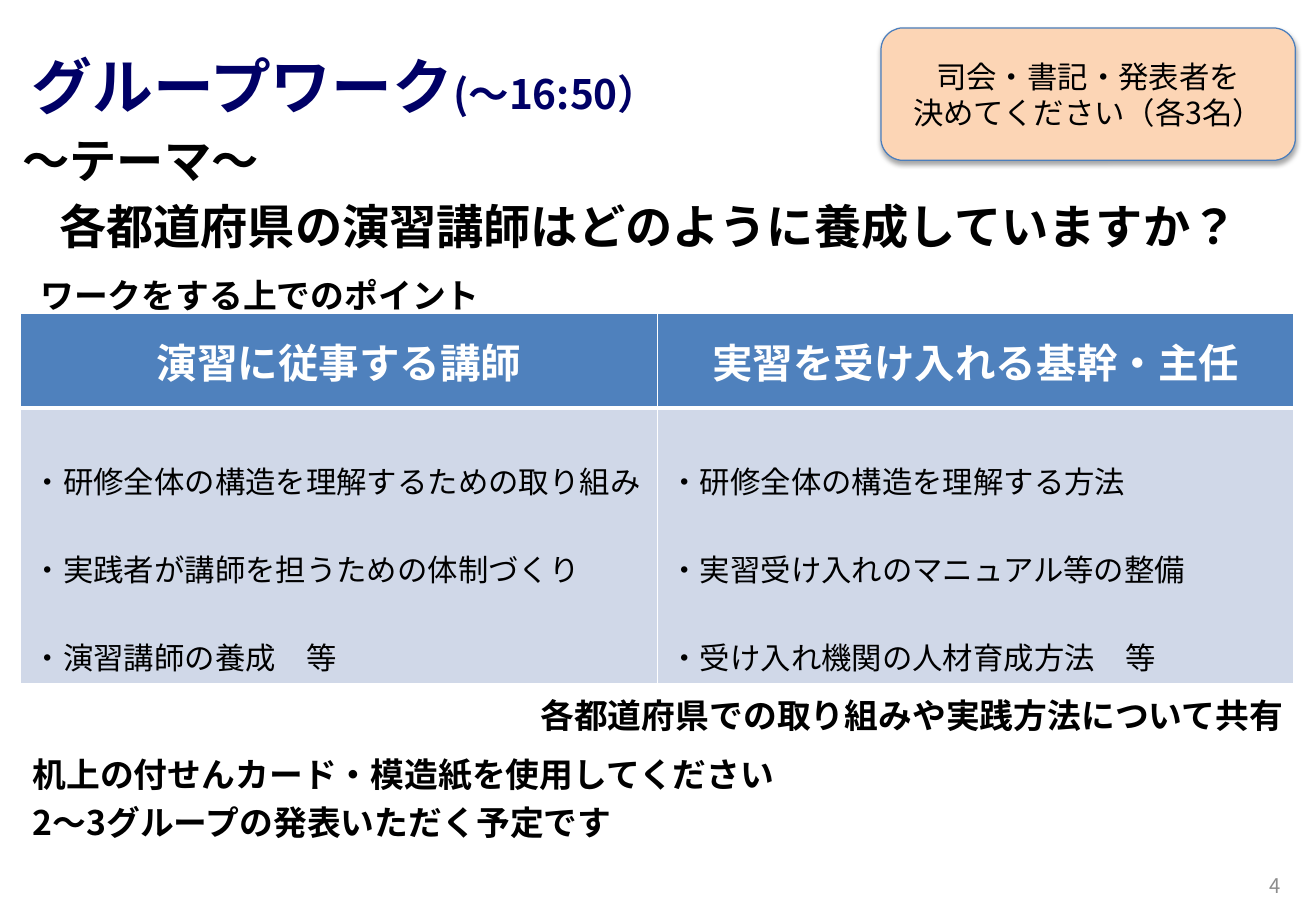
from pptx import Presentation
from pptx.dml.color import RGBColor
from pptx.enum.lang import MSO_LANGUAGE_ID as LANG
from pptx.enum.shapes import MSO_SHAPE as SHAPE
from pptx.enum.text import MSO_ANCHOR as ANCHOR, PP_ALIGN as ALIGN
from pptx.oxml import parse_xml
from pptx.oxml.ns import nsdecls, qn
from pptx.util import Inches, Pt

FONT = "Noto Sans CJK JP"
TITLE_ONLY = 5
BLACK, WHITE, NAVY, GREY = "000000", "FFFFFF", "000066", "8C8C8C"
HEADER_BLUE, BODY_BLUE = "4F81BD", "D0D8E8"
PEACH, OUTLINE_BLUE = "FCD5B5", "4B7EBC"


def color(hex_value):
    return RGBColor.from_string(hex_value)


def add_run(p, text, size, hex_value=BLACK, bold=False):
    r = p.add_run()
    r.text = text
    r.font.name, r.font.size, r.font.bold = FONT, Pt(size), bold
    r.font.color.rgb = color(hex_value)
    r.font.language_id = LANG.JAPANESE
    # East Asian glyphs take their own typeface
    ea = r._r.get_or_add_rPr().makeelement(qn("a:ea"), {"typeface": FONT})
    r.font._element.find(qn("a:latin")).addnext(ea)


def write(tf, lines, size, hex_value=BLACK, bold=False, align=ALIGN.LEFT,
          spacing=1.0, before=0):
    """Write one paragraph per line; before is a share of the text size."""
    for i, line in enumerate(lines):
        p = tf.add_paragraph() if i else tf.paragraphs[0]
        p.alignment, p.line_spacing = align, spacing
        p.space_before = Pt(before * size)
        add_run(p, line, size, hex_value, bold)


def add_text(slide, box, lines, size, anchor=ANCHOR.TOP, **fmt):
    tf = slide.shapes.add_textbox(*map(Inches, box)).text_frame
    tf.word_wrap, tf.vertical_anchor = True, anchor
    write(tf, lines, size, **fmt)


def add_title(slide, box):
    title = slide.shapes.title
    title.left, title.top, title.width, title.height = map(Inches, box)
    tf = title.text_frame
    tf.vertical_anchor = ANCHOR.MIDDLE
    write(tf, ["グループワーク"], 36, hex_value=NAVY, bold=True)
    add_run(tf.paragraphs[0], "(〜16:50）", 24, NAVY, True)


def set_border(cell, side, width):
    cell._tc.get_or_add_tcPr().insert(0, parse_xml(
        f'<a:{side} {nsdecls("a")} w="{Pt(width)}"><a:solidFill>'
        f'<a:srgbClr val="{WHITE}"/></a:solidFill></a:{side}>'))


def add_points_table(slide, box, header_height, columns):
    left, top, width, height = box
    table = slide.shapes.add_table(2, len(columns), *map(Inches, box)).table
    table.rows[0].height = Inches(header_height)
    table.rows[1].height = Inches(height - header_height)
    for i, (heading, points) in enumerate(columns):
        table.columns[i].width = Inches(width / len(columns))
        head, body = table.cell(0, i), table.cell(1, i)
        for cell, fill in ((head, HEADER_BLUE), (body, BODY_BLUE)):
            cell.fill.solid()
            cell.fill.fore_color.rgb = color(fill)
        # Thick rule between the rows
        set_border(head, "lnB", 3)
        set_border(body, "lnT", 3)
        head.vertical_anchor = ANCHOR.MIDDLE
        write(head.text_frame, [heading], 24, hex_value=WHITE, bold=True,
              align=ALIGN.CENTER)
        write(body.text_frame, points, 18, spacing=2.0)


def add_roles_callout(slide, box, lines):
    sp = slide.shapes.add_shape(SHAPE.ROUNDED_RECTANGLE, *map(Inches, box))
    sp.fill.solid()
    sp.fill.fore_color.rgb = color(PEACH)
    sp.line.color.rgb = color(OUTLINE_BLUE)
    sp.line.width = Pt(0.75)
    # Soft shadow straight below
    sp._element.spPr.append(parse_xml(
        f'<a:effectLst {nsdecls("a")}>'
        f'<a:outerShdw blurRad="{Pt(3.1)}" dist="{Pt(1.8)}" dir="5400000" '
        'rotWithShape="0"><a:srgbClr val="000000"><a:alpha val="35000"/>'
        '</a:srgbClr></a:outerShdw></a:effectLst>'))
    tf = sp.text_frame
    tf.word_wrap, tf.vertical_anchor = True, ANCHOR.MIDDLE
    write(tf, lines, 18, align=ALIGN.CENTER)


def build_group_work(prs):
    slide = prs.slides.add_slide(prs.slide_layouts[TITLE_ONLY])
    note = dict(size=20, bold=True, before=0.2)

    # Title and theme
    add_title(slide, (0.16, 0.08, 9.75, 1.25))
    add_text(slide, (0, 1.03, 10.83, 1.85),
             [" 〜テーマ〜", "　各都道府県の演習講師はどのように養成していますか？"],
             28, bold=True, before=0.2)

    # Discussion points
    add_points_table(slide, (0.17, 2.58, 10.48, 3.05), 0.78, [
        ("演習に従事する講師",
         ["・研修全体の構造を理解するための取り組み",
          "・実践者が講師を担うための体制づくり",
          "・演習講師の養成　等"]),
        ("実習を受け入れる基幹・主任",
         ["・研修全体の構造を理解する方法",
          "・実習受け入れのマニュアル等の整備",
          "・受け入れ機関の人材育成方法　等"]),
    ])

    # Notes around the table
    add_text(slide, (0.17, 2.21, 10.66, 0.4),
             [" ワークをする上でのポイント"], **note)
    add_text(slide, (0.17, 5.67, 10.49, 0.66),
             [" 各都道府県での取り組みや実践方法について共有"],
             align=ALIGN.RIGHT, **note)
    add_text(slide, (0.17, 6.16, 10.66, 1.11),
             ["机上の付せんカード・模造紙を使用してください",
              "2〜3グループの発表いただく予定です"], **note)

    # Callout and page number
    add_roles_callout(slide, (7.25, 0.23, 3.41, 1.09),
                      ["司会・書記・発表者を", "決めてください（各3名）"])
    add_text(slide, (8.39, 7.09, 2.25, 0.4), ["4"], 12,
             anchor=ANCHOR.MIDDLE, hex_value=GREY, align=ALIGN.RIGHT)


def main():
    prs = Presentation()
    prs.slide_width, prs.slide_height = Inches(10.83), Inches(7.5)
    build_group_work(prs)
    prs.save("out.pptx")


if __name__ == "__main__":
    main()
